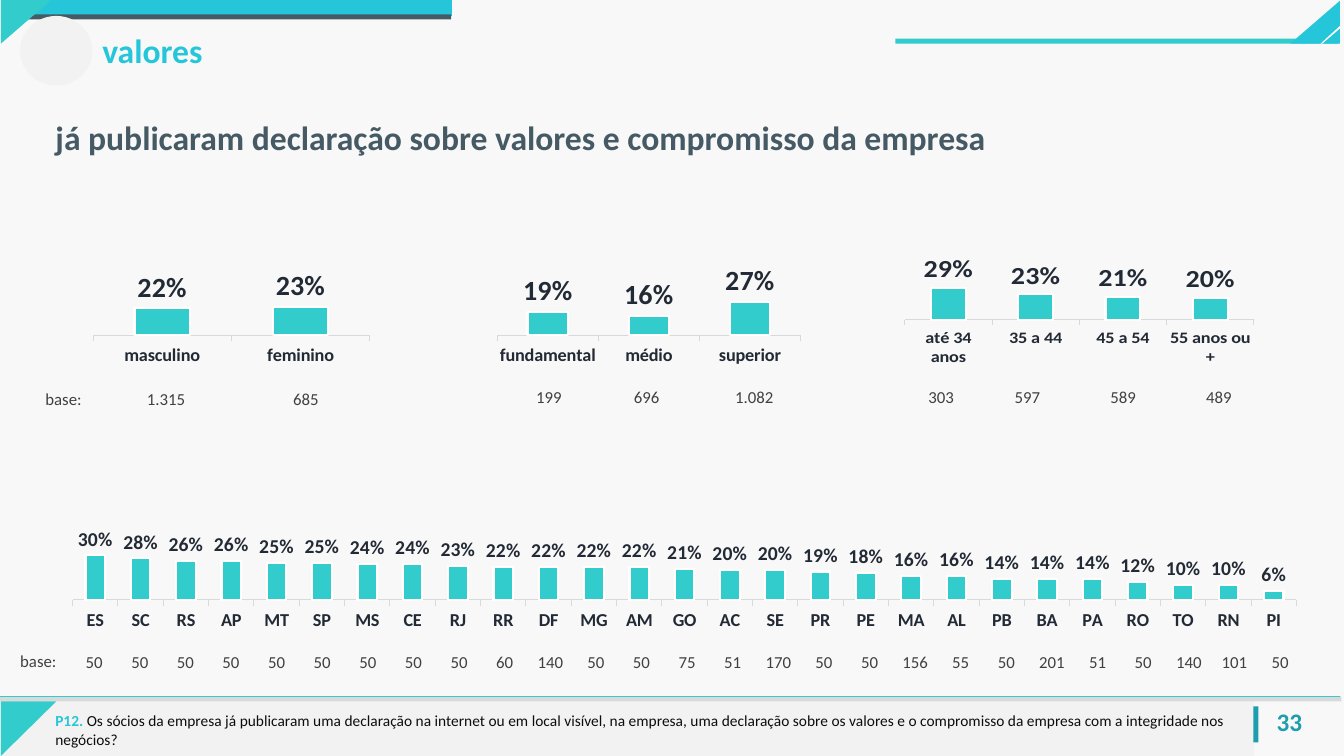
import pptx
import pptx.util
import pptx.chart.data
import pptx.dml.color
import pptx.enum.chart
import pptx.enum.shapes
import pptx.enum.text
import pptx.oxml
import pptx.oxml.ns

COLS, ROWS = 160, 90
WIDE, HIGH = pptx.util.Inches(13.33), pptx.util.Inches(7.5)
FONT = "Calibri"
TEAL, CYAN, SLATE, INK = "33CCCC", "26C6DA", "455A64", "222A35"
PALE, SILVER, WHITE, SEA = "F2F2F2", "D9D9D9", "FFFFFF", "1E9DAE"
BLACK, GREY = "0D0D0D", "404040"
BARE = "{2D5ABB26-0587-4C30-8999-92F81FD0307C}"
SHAPE = pptx.enum.shapes.MSO_SHAPE
ALIGN = pptx.enum.text.PP_ALIGN
ANCHOR = pptx.enum.text.MSO_ANCHOR
CHART = pptx.enum.chart

CHART_TOP, CHART_HIGH = 23.3, 20.4
BASE_HIGH = 4.4
INDENT = 3.5  # left margin of the first figure in a base row

GENDER = {"masculino": 22, "feminino": 23}
SCHOOL = {"fundamental": 19, "médio": 16, "superior": 27}
AGE = {"até 34 anos": 29, "35 a 44": 23, "45 a 54": 21, "55 anos ou +": 20}
STATES = {
    "ES": 30, "SC": 28, "RS": 26, "AP": 26, "MT": 25, "SP": 25, "MS": 24,
    "CE": 24, "RJ": 23, "RR": 22, "DF": 22, "MG": 22, "AM": 22, "GO": 21,
    "AC": 20, "SE": 20, "PR": 19, "PE": 18, "MA": 16, "AL": 16, "PB": 14,
    "BA": 14, "PA": 14, "RO": 12, "TO": 10, "RN": 10, "PI": 6,
}
STATE_BASE = ["50"] * 9 + ["60", "140", "50", "50", "75", "51", "170", "50", "50",
                           "156", "55", "50", "201", "51", "50", "140", "101", "50"]


def col(n):
    return pptx.util.Emu(round(WIDE * n / COLS))


def row(n):
    return pptx.util.Emu(round(HIGH * n / ROWS))


def box(x, y, w, h):
    return col(x), row(y), col(w), row(h)


def rgb(code):
    return pptx.dml.color.RGBColor.from_string(code)


def put(thing, **vals):
    """Set each named attribute on thing."""
    for name, val in vals.items():
        setattr(thing, name, val)


def paint(fill, code):
    fill.solid()
    fill.fore_color.rgb = rgb(code)


def style(font, size, code, bold=False):
    put(font, name=FONT, size=pptx.util.Pt(size), bold=bold)
    font.color.rgb = rgb(code)


def finish(shape, code):
    shape.shadow.inherit = False
    paint(shape.fill, code)
    shape.line.fill.background()
    return shape


def block(slide, code, place, kind=SHAPE.RECTANGLE):
    return finish(slide.shapes.add_shape(kind, *box(*place)), code)


def wedge(slide, code, first, *rest):
    """Draw a filled polygon through grid points."""
    pen = slide.shapes.build_freeform(col(first[0]), row(first[1]))
    pen.add_line_segments([(col(x), row(y)) for x, y in rest], close=True)
    finish(pen.convert_to_shape(), code)


def rule(slide, y, end):
    line = slide.shapes.add_connector(
        pptx.enum.shapes.MSO_CONNECTOR.STRAIGHT, 0, row(y), col(end), row(y))
    line.line.color.rgb = rgb(TEAL)
    line.line.width = pptx.util.Pt(0.5)
    line._element.spPr.append(pptx.oxml.parse_xml(
        f'<a:effectLst {pptx.oxml.ns.nsdecls("a")}/>'))


def write(shape, runs, size, align=ALIGN.LEFT, wrap=True):
    """Fill a shape with (text, colour, bold) runs."""
    frame = shape.text_frame
    put(frame, word_wrap=wrap, vertical_anchor=ANCHOR.TOP,
        auto_size=pptx.enum.text.MSO_AUTO_SIZE.NONE)
    para = frame.paragraphs[0]
    para.alignment = align
    for text, code, bold in runs:
        run = para.add_run()
        run.text = text
        style(run.font, size, code, bold)


def label(slide, place, runs, size, **more):
    write(slide.shapes.add_textbox(*box(*place)), runs, size, **more)


def bars(slide, place, shares, size=20, gap=150, lap=0):
    """Add a column chart of percentages."""
    data = pptx.chart.data.CategoryChartData()
    data.categories = list(shares)
    data.add_series("Series 1", [n / 100 for n in shares.values()])
    chart = slide.shapes.add_chart(
        CHART.XL_CHART_TYPE.COLUMN_CLUSTERED, *box(*place), data).chart
    put(chart, has_legend=False, has_title=False)
    style(chart.font, 10, "000000")
    put(chart.value_axis, visible=False, has_major_gridlines=False,
        minimum_scale=0, maximum_scale=0.9)
    axis = chart.category_axis
    put(axis, has_major_gridlines=False,
        major_tick_mark=CHART.XL_TICK_MARK.OUTSIDE)
    style(axis.tick_labels.font, 13, INK, True)
    axis.format.line.color.rgb = rgb(SILVER)
    axis.format.line.width = pptx.util.Pt(0.75)
    plot = chart.plots[0]
    put(plot, gap_width=gap, overlap=lap, vary_by_categories=False,
        has_data_labels=True)
    put(plot.data_labels, show_value=True, number_format="0%",
        number_format_is_linked=False,
        position=CHART.XL_LABEL_POSITION.OUTSIDE_END)
    style(plot.data_labels.font, size, INK, True)
    look = plot.series[0].format
    paint(look.fill, TEAL)
    look.line.color.rgb = rgb(WHITE)
    look.line.width = pptx.util.Pt(1.5)
    frame(chart)


def frame(chart):
    """Fix the inner plot area as shares of the chart."""
    area = chart._chartSpace.chart.plotArea
    for old in area.findall(pptx.oxml.ns.qn("c:layout")):
        area.remove(old)
    spots = {"x": 0.036, "y": 0.167, "w": 0.928, "h": 0.659}
    parts = '<c:layoutTarget val="inner"/><c:xMode val="edge"/><c:yMode val="edge"/>'
    parts += "".join(f'<c:{key} val="{val}"/>' for key, val in spots.items())
    area.insert(0, pptx.oxml.parse_xml(
        f'<c:layout {pptx.oxml.ns.nsdecls("c")}>'
        f'<c:manualLayout>{parts}</c:manualLayout></c:layout>'))


def bases(slide, x, y, widths, texts, align=ALIGN.CENTER, shift=None, tight=False):
    """Add a one-row table of base counts; shift is the indented column."""
    grid = slide.shapes.add_table(
        1, len(texts), *box(x, y, sum(widths), BASE_HIGH)).table
    put(grid, first_row=False, horz_banding=False)
    grid._tbl.tblPr.find(pptx.oxml.ns.qn("a:tableStyleId")).text = BARE
    for i, (wide, text) in enumerate(zip(widths, texts)):
        grid.columns[i].width = col(wide)
        cell = grid.cell(0, i)
        cell.fill.background()
        cell.text = text
        para = cell.text_frame.paragraphs[0]
        named = text == "base:"
        put(para, line_spacing=1.5, alignment=ALIGN.LEFT if named else align)
        style(para.runs[0].font, 12, GREY)
        if tight and not named:
            put(cell, vertical_anchor=ANCHOR.MIDDLE, margin_left=col(0.1),
                margin_right=col(0.1), margin_top=row(0.1), margin_bottom=0)
        if i == shift:
            cell.margin_left = col(INDENT)


def decor(slide):
    paint(slide.background.fill, "F8F8F8")
    for code, place in [
        (PALE, (0, 83.5, 149.3, 6.5)), (CYAN, (1.1, 0, 52.7, 1.9)),
        (SILVER, (0, 82.9, 159.7, 0.6)), (SLATE, (2.8, 1.7, 50.9, 0.6)),
        (TEAL, (106.6, 4.6, 52.7, 0.6)), (SEA, (149.2, 84.1, 0.6, 4.3)),
    ]:
        block(slide, code, place)
    wedge(slide, TEAL, (0.1, 0), (6.1, 0), (0.1, 5.2))
    wedge(slide, CYAN, (159.5, 0.1), (153.6, 5.2), (159.5, 5.2))
    wedge(slide, WHITE, (159.5, 3.4), (159.5, 3.1), (157.2, 5.2), (157.4, 5.2))
    wedge(slide, TEAL, (0.1, 83.5), (6.7, 83.5), (0.1, 90))
    rule(slide, 82.9, 159.5)
    block(slide, PALE, (2.4, 1.9, 8.6, 8.3), SHAPE.OVAL)


def main():
    deck = pptx.Presentation()
    put(deck, slide_width=WIDE, slide_height=HIGH)
    slide = deck.slides.add_slide(deck.slide_layouts[5])
    decor(slide)

    title = slide.shapes.title
    put(title, **dict(zip(("left", "top", "width", "height"),
                          box(5.4, 13.3, 146.8, 6))))
    write(title, [("já publicaram declaração sobre valores e compromisso da empresa",
                   SLATE, True)], 24)
    label(slide, (11, 3, 70, 6), [("valores", CYAN, True)], 24)
    label(slide, (149.8, 83.5, 7.4, 4.8), [("33", SEA, True)], 18,
          align=ALIGN.CENTER, wrap=False)
    label(slide, (5.4, 84.1, 144.1, 5.6), [
        ("P12. ", CYAN, True),
        ("Os sócios da empresa já publicaram uma declaração na internet ou em local "
         "visível, na empresa, uma declaração sobre os valores e o compromisso da "
         "empresa com a integridade nos negócios?", BLACK, False)], 11)

    for x, wide, shares in [(9.8, 35.5, GENDER), (57.8, 38.9, SCHOOL),
                            (106.1, 44.8, AGE)]:
        bars(slide, (x, CHART_TOP, wide, CHART_HIGH), shares)
    bars(slide, (3, 51.5, 157, 24.1), STATES, size=14, gap=132, lap=97)

    bases(slide, 4.2, 44.5, [9.8, 19.7, 7.7], ["base:", "1.315", "685"],
          align=ALIGN.LEFT, shift=1)
    bases(slide, 57.8, 44.3, [12.8] * 3, ["199", "696", "1.082"], shift=0)
    bases(slide, 105.2, 44.3, [11.4] * 4, ["303", "597", "589", "489"], shift=0)
    bases(slide, 1.2, 75.8, [7.3] + [5.43] * len(STATES), ["base:"] + STATE_BASE,
          tight=True)
    deck.save("out.pptx")


if __name__ == "__main__":
    main()
